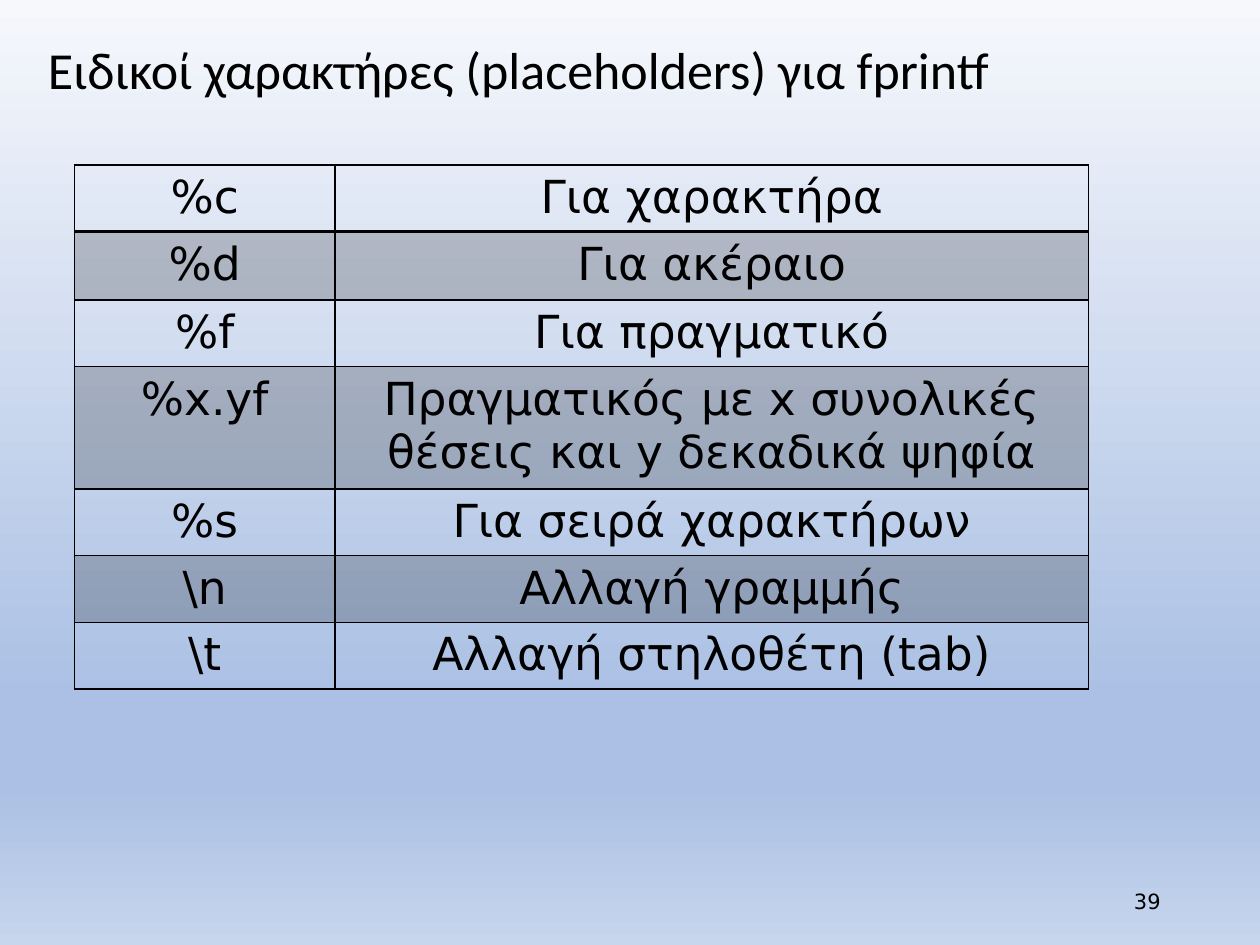
"""Build the slide listing the fprintf placeholders."""
from dataclasses import dataclass

from lxml.etree import SubElement
from pptx import Presentation
from pptx.dml.color import RGBColor
from pptx.enum.text import MSO_ANCHOR, MSO_AUTO_SIZE, PP_ALIGN
from pptx.oxml.ns import qn
from pptx.util import Inches, Pt


@dataclass(frozen=True)
class Theme:
    ink: str = "000000"
    backdrop: tuple = ((0, "F6F8FC"), (74, "ABC0E4"), (83, "ABC0E4"), (100, "C7D5ED"))
    band_opacity: int = 20
    title_font: str = "Calibri"
    body_font: str = "DejaVu Sans"
    title_size: float = 29.7
    cell_size: float = 26
    number_size: float = 12


theme = Theme()


def style(paragraph, font_name, size, alignment):
    paragraph.alignment = alignment
    paragraph.font.name = font_name
    paragraph.font.size = Pt(size)
    paragraph.font.color.rgb = RGBColor.from_string(theme.ink)


def add_border(cell, side, width):
    line = SubElement(cell._tc.get_or_add_tcPr(), qn(f"a:ln{side}"), w=str(Pt(width)))
    SubElement(SubElement(line, qn("a:solidFill")), qn("a:srgbClr"), val=theme.ink)


presentation = Presentation()
presentation.slide_width = Inches(10)
presentation.slide_height = Inches(7.5)
slide = presentation.slides.add_slide(presentation.slide_layouts[5])

backdrop = slide.background.fill
backdrop.gradient()
backdrop.gradient_angle = 270
stops = slide.element.find(".//" + qn("a:gsLst"))
stops.clear()
for position, colour in theme.backdrop:
    stop = SubElement(stops, qn("a:gs"), pos=str(position * 1000))
    SubElement(stop, qn("a:srgbClr"), val=colour)

title = slide.shapes.title
title.left, title.top = Inches(0.28), Inches(0.29)
title.width, title.height = Inches(8.05), Inches(0.58)
title.text_frame.text = "Ειδικοί χαρακτήρες (placeholders) για fprintf"
title.text_frame.vertical_anchor = MSO_ANCHOR.MIDDLE
title.text_frame.auto_size = MSO_AUTO_SIZE.NONE
heading = title.text_frame.paragraphs[0]
heading.line_spacing = 0.9
style(heading, theme.title_font, theme.title_size, PP_ALIGN.LEFT)

placeholders = [
    ("%c", "Για χαρακτήρα"),
    ("%d", "Για ακέραιο"),
    ("%f", "Για πραγματικό"),
    ("%x.yf", "Πραγματικός με x συνολικές θέσεις και y δεκαδικά ψηφία"),
    ("%s", "Για σειρά χαρακτήρων"),
    (r"\n", "Αλλαγή γραμμής"),
    (r"\t", "Αλλαγή στηλοθέτη (tab)"),
]
row_heights = [0.53, 0.54, 0.53, 0.97, 0.53, 0.53, 0.53]
table = slide.shapes.add_table(
    len(placeholders), 2, Inches(0.59), Inches(1.31), Inches(8.05), Inches(4.18)
).table
table.first_row = False
table.horz_banding = False
table.columns[0].width = Inches(2.07)
table.columns[1].width = Inches(5.98)

for row, (entry, height) in enumerate(zip(placeholders, row_heights)):
    table.rows[row].height = Inches(height)
    for column, wording in enumerate(entry):
        cell = table.cell(row, column)
        cell.text = wording
        style(cell.text_frame.paragraphs[0], theme.body_font, theme.cell_size, PP_ALIGN.CENTER)
        add_border(cell, "L", 1)
        add_border(cell, "R", 1)
        add_border(cell, "T", 2 if row == 1 else 1)
        add_border(cell, "B", 2 if row == 0 else 1)
        if row % 2:
            cell.fill.solid()
            cell.fill.fore_color.rgb = RGBColor.from_string(theme.ink)
            shade = cell._tc.tcPr.find(qn("a:solidFill")).find(qn("a:srgbClr"))
            SubElement(shade, qn("a:alpha"), val=str(theme.band_opacity * 1000))
        else:
            cell.fill.background()

page_number = slide.shapes.add_textbox(
    Inches(7.06), Inches(6.95), Inches(2.25), Inches(0.4)
).text_frame
page_number.word_wrap = True
page_number.vertical_anchor = MSO_ANCHOR.MIDDLE
page_number.text = "39"
style(page_number.paragraphs[0], theme.body_font, theme.number_size, PP_ALIGN.RIGHT)

presentation.save("out.pptx")
